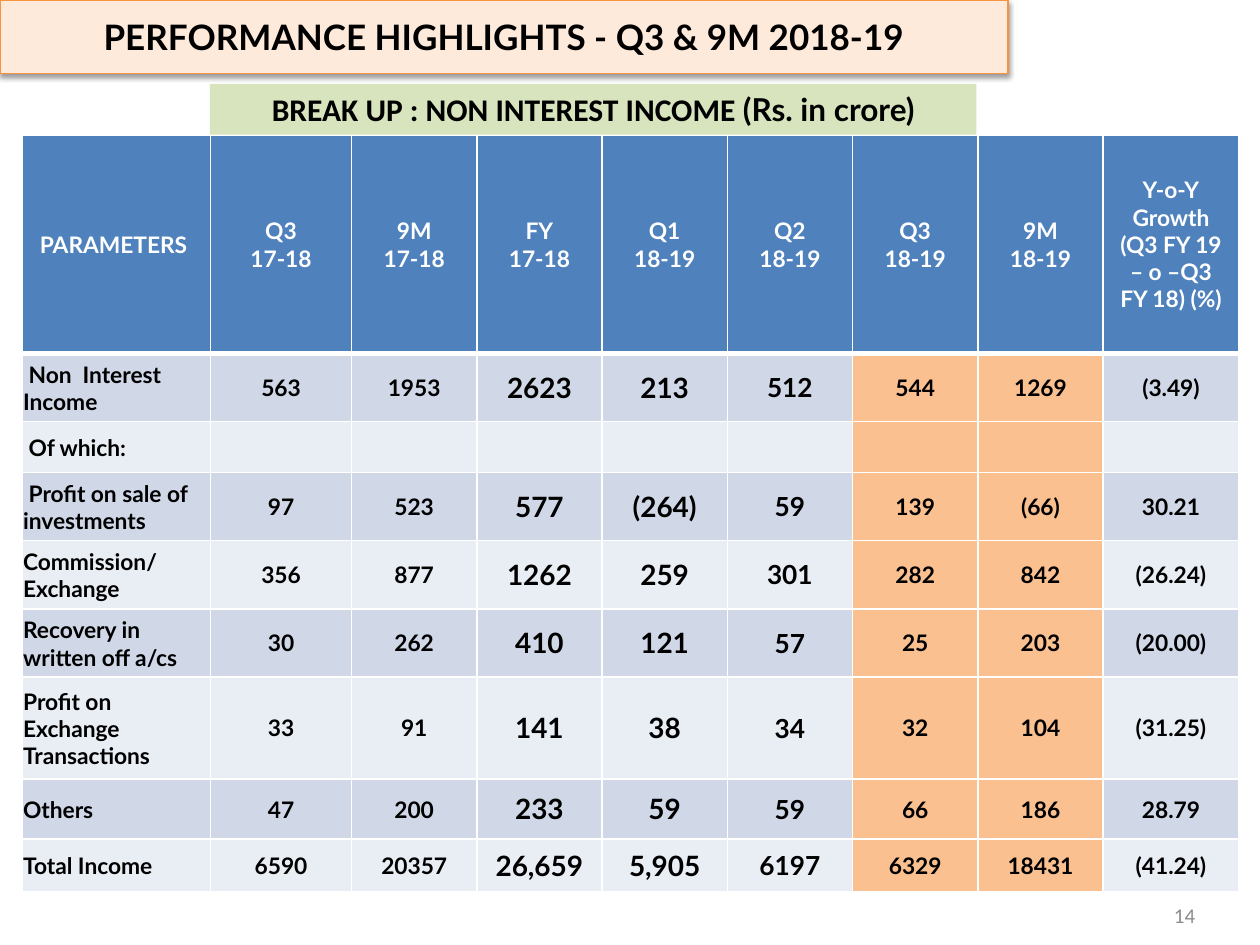
from dataclasses import dataclass

from lxml import etree
from pptx import Presentation
from pptx.dml.color import RGBColor
from pptx.enum import shapes, text
from pptx.oxml import ns
from pptx.util import Pt


@dataclass(frozen=True)
class Theme:
    heading_font: str = "Lato"
    body_font: str = "Calibri"
    ink: str = "000000"
    white: str = "FFFFFF"
    muted: str = "8C8C8C"
    banner: str = "FDEADA"
    banner_line: str = "F69240"
    caption: str = "D7E4BD"
    header: str = "4F81BD"
    bands: tuple = ("D0D8E8", "E9EDF4")
    highlight: str = "FAC090"
    title_size: int = 20
    caption_size: int = 18
    table_size: int = 13
    full_year_size: int = 16
    second_quarter_size: int = 15
    number_size: int = 12


def rgb(value):
    return RGBColor.from_string(value)


def add_xml(parent, tag, **attributes):
    return etree.SubElement(parent, ns.qn(tag), attributes)


class SlideBuilder:
    def __init__(self, slide, theme):
        self.slide = slide
        self.theme = theme

    def add_words(self, paragraph, words, size, font, color, bold=True):
        run = paragraph.add_run()
        run.text = words
        run.font.size = Pt(size)
        run.font.name = font
        run.font.bold = bold
        run.font.color.rgb = rgb(color)

    def title(self, words, left, top, width, height):
        theme = self.theme
        banner = self.slide.shapes.title
        banner.left, banner.top = Pt(left), Pt(top)
        banner.width, banner.height = Pt(width), Pt(height)
        banner.fill.solid()
        banner.fill.fore_color.rgb = rgb(theme.banner)
        banner.line.color.rgb = rgb(theme.banner_line)
        banner.line.width = Pt(0.75)
        effects = add_xml(banner.element.spPr, "a:effectLst")
        shadow = add_xml(effects, "a:outerShdw", blurRad=str(Pt(3.1)),
                         dist=str(Pt(1.6)), dir="5400000", rotWithShape="0")
        tint = add_xml(shadow, "a:srgbClr", val=theme.ink)
        add_xml(tint, "a:alpha", val="38000")
        frame = banner.text_frame
        frame.auto_size = text.MSO_AUTO_SIZE.NONE
        frame.vertical_anchor = text.MSO_ANCHOR.MIDDLE
        paragraph = frame.paragraphs[0]
        paragraph.alignment = text.PP_ALIGN.CENTER
        self.add_words(paragraph, words, theme.title_size, theme.heading_font, theme.ink)

    def caption(self, parts, left, top, width, height):
        theme = self.theme
        strip = self.slide.shapes.add_shape(
            shapes.MSO_SHAPE.RECTANGLE, Pt(left), Pt(top), Pt(width), Pt(height))
        strip.shadow.inherit = False
        strip.fill.solid()
        strip.fill.fore_color.rgb = rgb(theme.caption)
        strip.line.fill.background()
        frame = strip.text_frame
        frame.word_wrap = True
        frame.auto_size = text.MSO_AUTO_SIZE.SHAPE_TO_FIT_TEXT
        frame.vertical_anchor = text.MSO_ANCHOR.TOP
        paragraph = frame.paragraphs[0]
        paragraph.alignment = text.PP_ALIGN.CENTER
        for words, font in parts:
            self.add_words(paragraph, words, theme.caption_size, font, theme.ink)

    def page_number(self, words, left, top, width, height):
        theme = self.theme
        number = self.slide.shapes.add_textbox(Pt(left), Pt(top), Pt(width), Pt(height))
        frame = number.text_frame
        frame.word_wrap = True
        frame.vertical_anchor = text.MSO_ANCHOR.MIDDLE
        paragraph = frame.paragraphs[0]
        paragraph.alignment = text.PP_ALIGN.RIGHT
        self.add_words(paragraph, words, theme.number_size, theme.body_font, theme.muted, False)

    def borders(self, cell, bottom):
        properties = cell._tc.get_or_add_tcPr()
        sides = (("a:lnL", 1), ("a:lnR", 1), ("a:lnT", 1), ("a:lnB", bottom))
        for position, (side, width) in enumerate(sides):
            line = etree.Element(ns.qn(side), w=str(Pt(width)))
            fill = add_xml(line, "a:solidFill")
            add_xml(fill, "a:srgbClr", val=self.theme.white)
            properties.insert(position, line)

    def cell(self, cell, words, fill, color, size, label=False, bottom=1, before=0):
        cell.fill.solid()
        cell.fill.fore_color.rgb = rgb(fill)
        self.borders(cell, bottom)
        cell.vertical_anchor = text.MSO_ANCHOR.MIDDLE
        if label:
            cell.margin_left = cell.margin_right = cell.margin_top = Pt(0.75)
            cell.margin_bottom = 0
        if not words:
            cell.margin_top = cell.margin_bottom = 0
            return
        frame = cell.text_frame
        for position, line in enumerate(words.split("\n")):
            paragraph = frame.add_paragraph() if position else frame.paragraphs[0]
            paragraph.alignment = text.PP_ALIGN.LEFT if label else text.PP_ALIGN.CENTER
            if before:
                paragraph.space_before = Pt(before)
            self.add_words(paragraph, line, size, self.theme.heading_font, color)

    def table(self, headings, records, left, top, widths, heights):
        theme = self.theme
        grid = self.slide.shapes.add_table(
            len(heights), len(widths), Pt(left), Pt(top),
            Pt(sum(widths)), Pt(sum(heights))).table
        for column, width in zip(grid.columns, widths):
            column.width = Pt(width)
        for row, height in zip(grid.rows, heights):
            row.height = Pt(height)
        for column, heading in enumerate(headings):
            self.cell(grid.cell(0, column), heading, theme.header, theme.white,
                      theme.table_size, bottom=3, before=0 if column else 2.6)
        sizes = {3: theme.full_year_size, 4: theme.full_year_size,
                 5: theme.second_quarter_size}
        for row, record in enumerate(records, 1):
            band = theme.bands[(row - 1) % 2]
            for column, value in enumerate(record):
                size = sizes.get(column, theme.table_size)
                is_total = row == len(records) and column > 0
                self.cell(grid.cell(row, column), value,
                          theme.highlight if column in (6, 7) else band,
                          theme.ink, size, label=column == 0,
                          before=0.2 * size if is_total else 0)


HEADINGS = ["PARAMETERS ", "Q3\n17-18", "9M\n17-18", "FY\n17-18", "Q1\n18-19",
            "Q2\n18-19", "Q3\n18-19", "9M\n18-19",
            "Y-o-Y\nGrowth\n(Q3 FY 19 – o –Q3 FY 18) (%)"]
INCOME = [
    [" Non  Interest Income", "563", "1953", "2623", "213", "512", "544", "1269", "(3.49)"],
    [" Of which:"] + [""] * 8,
    [" Profit on sale of  investments", "97", "523", "577", "(264)", "59", "139", "(66)", "30.21"],
    ["Commission/ Exchange", "356", "877", "1262", "259", "301", "282", "842", "(26.24)"],
    ["Recovery in written off a/cs", "30", "262", "410", "121", "57", "25", "203", "(20.00)"],
    ["Profit on Exchange Transactions", "33", "91", "141", "38", "34", "32", "104", "(31.25)"],
    ["Others", "47", "200", "233", "59", "59", "66", "186", "28.79"],
    ["Total Income", "6590", "20357", "26,659", "5,905", "6197", "6329", "18431", "(41.24)"],
]


def main():
    deck = Presentation()
    deck.slide_width, deck.slide_height = Pt(720), Pt(540)
    theme = Theme()
    builder = SlideBuilder(deck.slides.add_slide(deck.slide_layouts[5]), theme)
    builder.page_number("14", 522, 508.5, 168, 28.75)
    builder.caption([("BREAK UP : NON INTEREST INCOME ", theme.body_font),
                     ("(Rs. in crore)", theme.heading_font)], 120, 48, 438, 29)
    builder.table(HEADINGS, INCOME, 12.5, 77.5,
                  [107.8, 80.6] + [71.6] * 6 + [77.6],
                  [124.5, 39, 29, 39, 39, 39, 58.3, 34.4, 30])
    builder.title("PERFORMANCE HIGHLIGHTS - Q3 & 9M 2018-19", 0, 0, 576, 42)
    deck.save("out.pptx")


if __name__ == "__main__":
    main()
